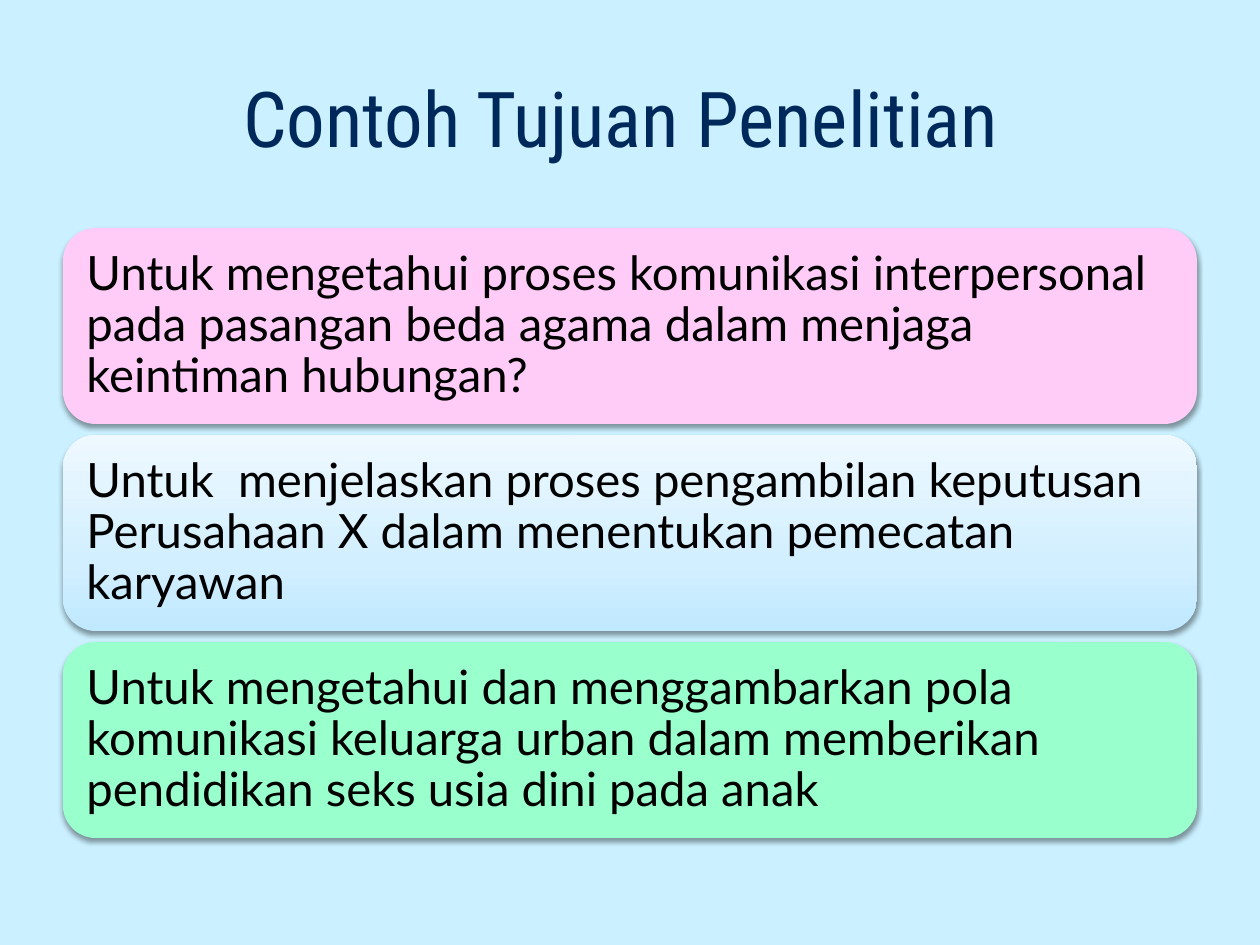
from copy import deepcopy

from lxml.etree import SubElement
from pptx import Presentation
from pptx.dml.color import RGBColor
from pptx.enum.shapes import MSO_SHAPE
from pptx.enum.text import MSO_ANCHOR, PP_ALIGN
from pptx.oxml.ns import qn
from pptx.util import Pt

SCALE = 914400 / 126

SKY = RGBColor(0xCB, 0xF0, 0xFF)
NAVY = RGBColor(0x00, 0x29, 0x5B)
BLACK = RGBColor(0x00, 0x00, 0x00)
PINK = RGBColor(0xFE, 0xCC, 0xF7)
MINT = RGBColor(0x99, 0xFF, 0xCC)
BLUES = (
    (0, RGBColor(0xC0, 0xE8, 0xFF)),
    (0.35, RGBColor(0xD2, 0xEF, 0xFF)),
    (1, RGBColor(0xEE, 0xF8, 0xFF)),
)

GOALS = (
    ("Untuk mengetahui proses komunikasi interpersonal pada pasangan beda "
     "agama dalam menjaga keintiman hubungan?", PINK),
    ("Untuk  menjelaskan proses pengambilan keputusan Perusahaan X dalam "
     "menentukan pemecatan karyawan", BLUES),
    ("Untuk mengetahui dan menggambarkan pola komunikasi keluarga urban dalam "
     "memberikan pendidikan seks usia dini pada anak", MINT),
)


def px(n):
    return round(n * SCALE)


def write(frame, text, *, font, size, color, align=PP_ALIGN.LEFT, inset=13, spacing=1.0):
    frame.word_wrap = True
    frame.vertical_anchor = MSO_ANCHOR.MIDDLE
    frame.margin_left = frame.margin_right = px(inset)
    frame.margin_top = frame.margin_bottom = px(inset)
    par = frame.paragraphs[0]
    par.alignment = align
    par.line_spacing = spacing
    run = par.add_run()
    run.text = text
    run.font.name = font
    run.font.size = Pt(size)
    run.font.color.rgb = color


def blend(shape, colors):
    """Fill the shape upwards through three (position, colour) stops."""
    shape.fill.gradient()
    shape.fill.gradient_angle = 90
    stops = shape._element.spPr.find(qn("a:gradFill")).find(qn("a:gsLst"))
    stops.append(deepcopy(stops[-1]))
    for stop, (place, color) in zip(shape.fill.gradient_stops, colors):
        stop.position = place
        stop.color.rgb = color


def shade(shape):
    """Give the shape a soft shadow straight below it."""
    shape.shadow.inherit = False
    effects = shape._element.spPr.find(qn("a:effectLst"))
    outer = SubElement(effects, qn("a:outerShdw"), blurRad=str(Pt(3.1)),
                       dist=str(Pt(1.6)), dir="5400000", rotWithShape="0")
    color = SubElement(outer, qn("a:srgbClr"), val=str(BLACK))
    SubElement(color, qn("a:alpha"), val="38000")


class Deck:
    """Holds the style and the current slide."""

    head = "Roboto Condensed"
    body = "Lato"

    def __init__(self):
        self.prs = Presentation()
        self.prs.slide_width, self.prs.slide_height = px(1260), px(945)
        self.slide = self.prs.slides.add_slide(self.prs.slide_layouts[5])
        back = self.slide.background.fill
        back.solid()
        back.fore_color.rgb = SKY

    def title(self, text, x, y, w, h):
        shape = self.slide.shapes.title
        shape.left, shape.top, shape.width, shape.height = map(px, (x, y, w, h))
        write(shape.text_frame, text, font=self.head, size=44, color=NAVY,
              align=PP_ALIGN.CENTER)

    def card(self, text, fill, x, y, w, h):
        shape = self.slide.shapes.add_shape(
            MSO_SHAPE.ROUNDED_RECTANGLE, *map(px, (x, y, w, h)))
        if isinstance(fill, RGBColor):
            shape.fill.solid()
            shape.fill.fore_color.rgb = fill
        else:
            blend(shape, fill)
        shape.line.fill.background()
        shade(shape)
        write(shape.text_frame, text, font=self.body, size=27, color=BLACK,
              inset=14, spacing=0.9)

    def save(self):
        self.prs.save("out.pptx")


def main():
    deck = Deck()
    deck.title("Contoh Tujuan Penelitian ", 63, 38, 1134, 157)
    high, gap = 196, 11
    for i, (text, fill) in enumerate(GOALS):
        deck.card(text, fill, 63, 228 + i * (high + gap), 1134, high)
    deck.save()


if __name__ == "__main__":
    main()
